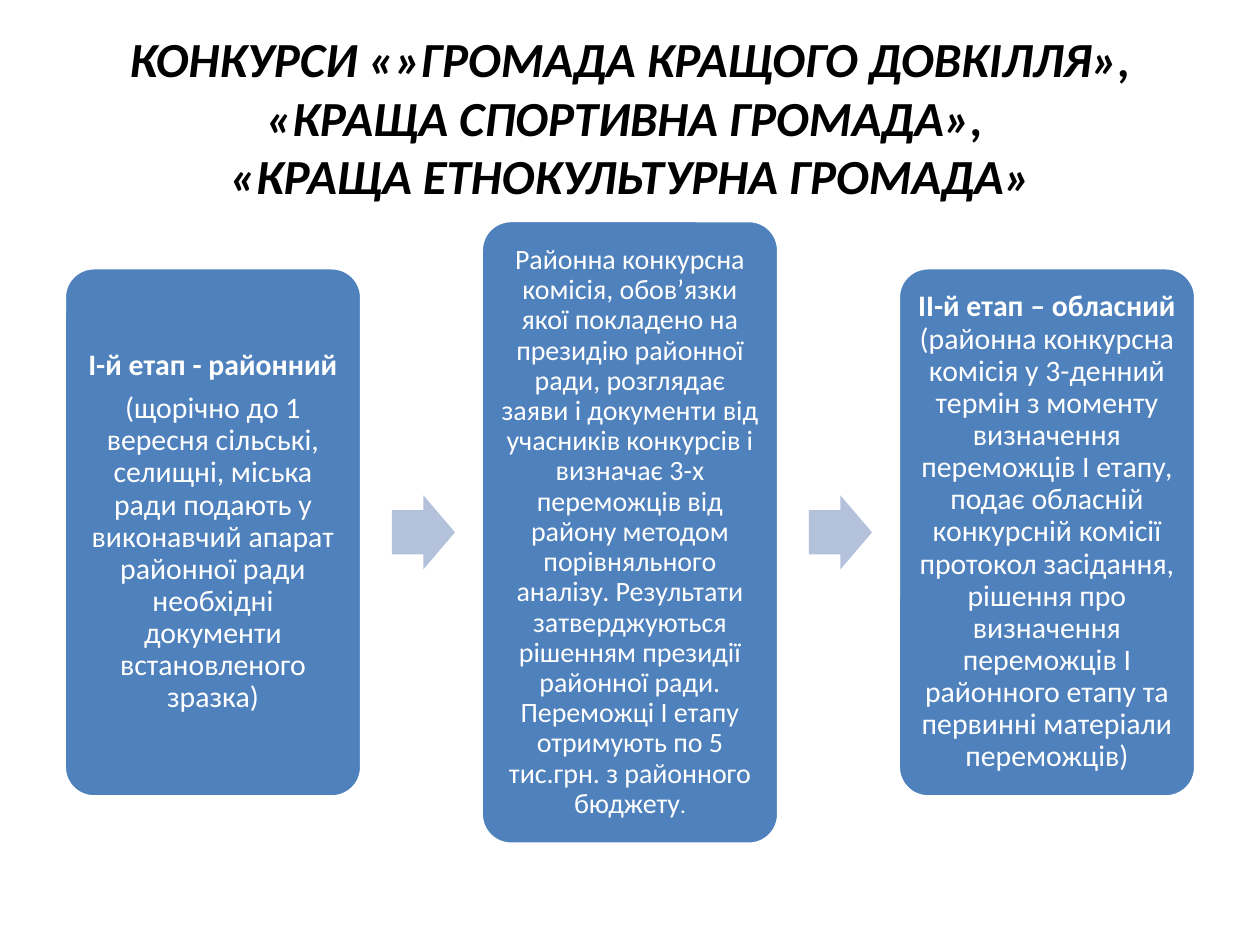
from dataclasses import dataclass

from pptx import Presentation
from pptx.dml.color import RGBColor
from pptx.enum.shapes import MSO_SHAPE
from pptx.enum.text import MSO_ANCHOR, MSO_AUTO_SIZE, PP_ALIGN
from pptx.util import Pt


@dataclass(frozen=True)
class Theme:
    font: str = "Calibri"
    title: RGBColor = RGBColor(0x00, 0x00, 0x00)
    text: RGBColor = RGBColor(0xFF, 0xFF, 0xFF)
    card: RGBColor = RGBColor(0x4F, 0x81, 0xBD)
    arrow: RGBColor = RGBColor(0xB3, 0xC1, 0xDB)
    title_size: int = 28
    stage_size: int = 17
    review_size: int = 16
    dot_size: int = 13


THEME = Theme()

TITLE = (
    "КОНКУРСИ «»ГРОМАДА КРАЩОГО ДОВКІЛЛЯ», «КРАЩА СПОРТИВНА ГРОМАДА», \v"
    "«КРАЩА ЕТНОКУЛЬТУРНА ГРОМАДА»"
)

STAGES = [
    (302.4, [
        [("І-й етап - районний", THEME.stage_size, True)],
        [("(щорічно до 1 вересня сільські, селищні, міська ради подають у "
          "виконавчий апарат районної ради необхідні документи "
          "встановленого зразка)", THEME.stage_size, False)],
    ]),
    (356.4, [
        [("Районна конкурсна комісія, обов’язки якої покладено на президію "
          "районної ради, розглядає заяви і документи від учасників конкурсів "
          "і визначає 3-х переможців від району методом порівняльного аналізу. "
          "Результати затверджуються рішенням президії районної ради. "
          "Переможці І етапу отримують по 5 тис.грн. з районного бюджету",
          THEME.review_size, False),
         (".", THEME.dot_size, False)],
    ]),
    (302.4, [
        [("ІІ-й етап – обласний ", THEME.stage_size, True),
         ("(районна конкурсна комісія у 3-денний термін з моменту визначення "
          "переможців І етапу, подає обласній конкурсній комісії протокол "
          "засідання, рішення про визначення переможців І районного етапу та "
          "первинні матеріали переможців)", THEME.stage_size, False)],
    ]),
]


def style_run(r, size, color, bold, italic=False):
    r.font.name = THEME.font
    r.font.size = Pt(size)
    r.font.bold = bold
    r.font.italic = italic
    r.font.color.rgb = color


def add_title(s, left, top, width, height):
    sp = s.shapes.title
    sp.left, sp.top, sp.width, sp.height = map(Pt, (left, top, width, height))
    tf = sp.text_frame
    tf.text = TITLE
    tf.word_wrap = True
    tf.auto_size = MSO_AUTO_SIZE.NONE
    tf.vertical_anchor = MSO_ANCHOR.MIDDLE
    p = tf.paragraphs[0]
    p.alignment = PP_ALIGN.CENTER
    for r in p.runs:
        style_run(r, THEME.title_size, THEME.title, True, True)


def add_block(s, kind, left, middle, width, height, color):
    sp = s.shapes.add_shape(
        kind, Pt(left), Pt(middle - height / 2), Pt(width), Pt(height))
    sp.shadow.inherit = False
    sp.fill.solid()
    sp.fill.fore_color.rgb = color
    return sp


def add_card(s, left, middle, width, height, paragraphs):
    sp = add_block(s, MSO_SHAPE.ROUNDED_RECTANGLE, left, middle, width, height,
                   THEME.card)
    sp.adjustments[0] = 0.1
    sp.line.color.rgb = THEME.text
    sp.line.width = Pt(2)
    tf = sp.text_frame
    tf.word_wrap = True
    tf.vertical_anchor = MSO_ANCHOR.MIDDLE
    tf.margin_left = tf.margin_right = tf.margin_top = tf.margin_bottom = Pt(5)
    for i, runs in enumerate(paragraphs):
        p = tf.add_paragraph() if i else tf.paragraphs[0]
        p.alignment = PP_ALIGN.CENTER
        p.line_spacing = 0.9
        p.space_before = Pt(6 if i else 0)
        for text, size, bold in runs:
            r = p.add_run()
            r.text = text
            style_run(r, size, THEME.text, bold)


def add_arrow(s, left, middle, width, height):
    sp = add_block(s, MSO_SHAPE.RIGHT_ARROW, left, middle, width, height,
                   THEME.arrow)
    sp.adjustments[0] = 0.6
    sp.adjustments[1] = 0.5
    sp.line.fill.background()


def add_process(s, left, top, width, height):
    card_w, arrow_w, arrow_h = 170, 36, 42.2
    pitch = (width - card_w) / (len(STAGES) - 1)
    middle = top + height / 2
    for i, (card_h, paragraphs) in enumerate(STAGES):
        x = left + i * pitch
        if i:
            add_arrow(s, x - 51, middle, arrow_w, arrow_h)
        add_card(s, x, middle, card_w, card_h, paragraphs)


def main():
    prs = Presentation()
    prs.slide_width, prs.slide_height = Pt(720), Pt(540)
    s = prs.slides.add_slide(prs.slide_layouts[5])
    add_title(s, 36, 21.6, 648, 90)
    add_process(s, 36.7, 126, 646.6, 356.4)
    prs.save("out.pptx")


if __name__ == "__main__":
    main()
